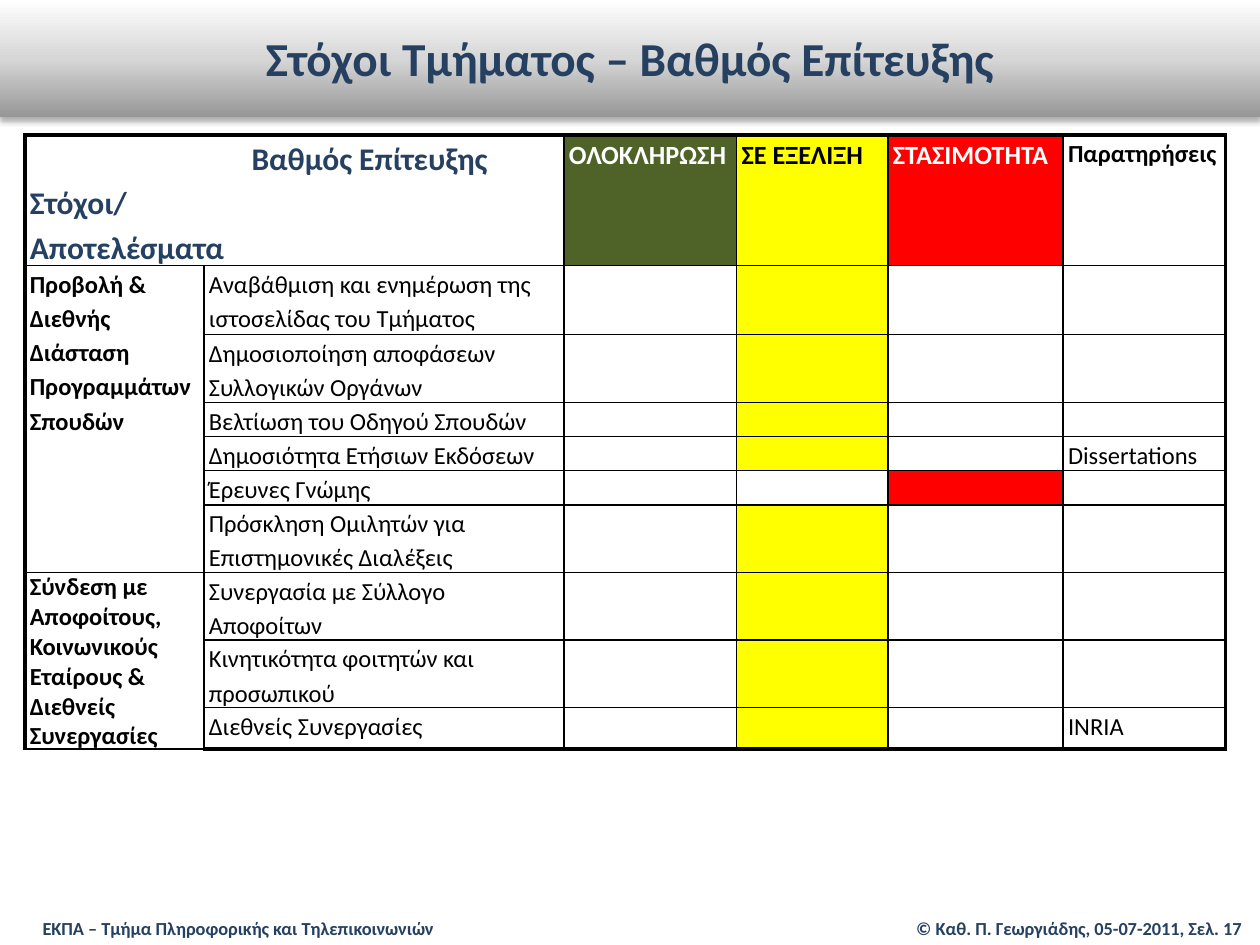
"""Build the slide on department goals and their degree of achievement."""
from lxml import etree
from pptx import Presentation
from pptx.dml.color import RGBColor
from pptx.enum.text import MSO_ANCHOR, MSO_AUTO_SIZE, PP_ALIGN
from pptx.oxml import parse_xml
from pptx.oxml.ns import nsdecls, qn
from pptx.util import Cm, Pt

LEFT, CENTER, RIGHT = PP_ALIGN.LEFT, PP_ALIGN.CENTER, PP_ALIGN.RIGHT
MIDDLE, NO_FIT = MSO_ANCHOR.MIDDLE, MSO_AUTO_SIZE.NONE

NAVY, BLACK, WHITE = "254061", "000000", "FFFFFF"
GREEN, YELLOW, RED = "4F6228", "FFFF00", "FF0000"

TITLE = "Στόχοι Τμήματος – Βαθμός Επίτευξης"
FOOTERS = [
    ("ΕΚΠΑ – Τμήμα Πληροφορικής και Τηλεπικοινωνιών", 0.61, 9.3, LEFT),
    ("© Καθ. Π. Γεωργιάδης, 05-07-2011, Σελ. 17", 18.08, 7.21, RIGHT),
]
CORNER = ["Βαθμός Επίτευξης", "Στόχοι/", "Αποτελέσματα"]
CORNER_INDENT = 4.47
HEADERS = [
    ("ΟΛΟΚΛΗΡΩΣΗ", 15, WHITE, GREEN),
    ("ΣΕ ΕΞΕΛΙΞΗ", 15, BLACK, YELLOW),
    ("ΣΤΑΣΙΜΟΤΗΤΑ", 15, WHITE, RED),
    ("Παρατηρήσεις", 14, BLACK, None),
]
PROGRESS, STALLED = 3, 4
STATUS_FILLS = {PROGRESS: YELLOW, STALLED: RED}
GROUPS = [
    ("Προβολή & Διεθνής Διάσταση Προγραμμάτων Σπουδών", 1.15, [
        ("Αναβάθμιση και ενημέρωση της ιστοσελίδας του Τμήματος", PROGRESS, ""),
        ("Δημοσιοποίηση αποφάσεων Συλλογικών Οργάνων", PROGRESS, ""),
        ("Βελτίωση του Οδηγού Σπουδών", PROGRESS, ""),
        ("Δημοσιότητα Ετήσιων Εκδόσεων", PROGRESS, "Dissertations"),
        ("Έρευνες Γνώμης", STALLED, ""),
        ("Πρόσκληση Ομιλητών για Επιστημονικές Διαλέξεις", PROGRESS, ""),
    ]),
    ("Σύνδεση με Αποφοίτους, Κοινωνικούς Εταίρους & Διεθνείς Συνεργασίες", 1, [
        ("Συνεργασία με Σύλλογο Αποφοίτων", PROGRESS, ""),
        ("Κινητικότητα φοιτητών και προσωπικού", PROGRESS, ""),
        ("Διεθνείς Συνεργασίες", PROGRESS, "INRIA"),
    ]),
]
COLUMN_WIDTHS = [3.61, 7.26, 3.48, 3.05, 3.53, 3.28]
ROW_HEIGHTS = [2.62, 1.4, 1.36, 0.69, 0.69, 0.69, 1.36, 1.36, 1.36, 0.81]
CELL_MARGINS = {"margin_left": Cm(0.1), "margin_right": Cm(0.1),
                "margin_top": 0, "margin_bottom": 0}
THIN, THICK = Pt(1), Pt(2.25)

BAND_FILL = f"""<a:gradFill {nsdecls('a')} rotWithShape="1"><a:gsLst>
<a:gs pos="0"><a:srgbClr val="979797"/></a:gs>
<a:gs pos="50000"><a:srgbClr val="D7D7D7"/></a:gs>
<a:gs pos="100000"><a:srgbClr val="FFFFFF"/></a:gs>
</a:gsLst><a:lin ang="16200000" scaled="0"/></a:gradFill>"""
BAND_SHADOW = f"""<a:effectLst {nsdecls('a')}>
<a:outerShdw blurRad="44450" dist="27940" dir="5400000" algn="ctr" rotWithShape="0">
<a:srgbClr val="000000"><a:alpha val="32000"/></a:srgbClr></a:outerShdw></a:effectLst>"""


def color(value):
    return RGBColor.from_string(value)


def apply(target, values):
    for name, value in values.items():
        setattr(target, name, value)


def write(frame, lines, size, ink, bold, **paragraph_format):
    for index, line in enumerate(lines):
        para = frame.add_paragraph() if index else frame.paragraphs[0]
        apply(para, paragraph_format)
        span = para.add_run()
        span.text = line
        apply(span.font, {"name": "Calibri", "size": Pt(size), "bold": bold})
        span.font.color.rgb = color(ink)


def place(shape, left, top, width, height):
    apply(shape, {"left": Cm(left), "top": Cm(top),
                  "width": Cm(width), "height": Cm(height)})


def add_title(page):
    title = page.shapes.title
    place(title, 0, -0.02, 25.4, 2.38)
    apply(title.text_frame, {"auto_size": NO_FIT, "vertical_anchor": MIDDLE,
                             "word_wrap": True})
    write(title.text_frame, [TITLE], 27, NAVY, True, alignment=CENTER)
    for markup in (BAND_FILL, BAND_SHADOW):
        title._element.spPr.append(parse_xml(markup))


def border(cell, sides):
    properties = cell._tc.get_or_add_tcPr()
    for index, (side, width) in enumerate(sides.items()):
        properties.insert(index, parse_xml(
            f'<a:ln{side} {nsdecls("a")} w="{width}"><a:solidFill>'
            f'<a:srgbClr val="{BLACK}"/></a:solidFill></a:ln{side}>'))


def fill_cell(cell, fill):
    if fill:
        cell.fill.solid()
        cell.fill.fore_color.rgb = color(fill)
    else:
        cell.fill.background()


def style_grid(table):
    last_row, last_column = len(ROW_HEIGHTS) - 1, len(COLUMN_WIDTHS) - 1
    for row in range(last_row + 1):
        for column in range(last_column + 1):
            cell = table.cell(row, column)
            apply(cell, CELL_MARGINS)
            fill_cell(cell, None)
            border(cell, {
                "L": THIN if column else THICK,
                "R": THICK if column == last_column else THIN,
                "T": THIN if row else THICK,
                "B": THICK if row == last_row else THIN,
            })
            if not cell.text:
                ending = etree.SubElement(cell.text_frame.paragraphs[0]._p,
                                          qn("a:endParaRPr"))
                ending.set("sz", "1400")


def add_goals(page):
    table = page.shapes.add_table(
        len(ROW_HEIGHTS), len(COLUMN_WIDTHS), Cm(0.5), Cm(2.72),
        Cm(sum(COLUMN_WIDTHS)), Cm(sum(ROW_HEIGHTS))).table
    apply(table, {"first_row": False, "horz_banding": False})
    for column, width in zip(table.columns, COLUMN_WIDTHS):
        column.width = Cm(width)
    for row, height in zip(table.rows, ROW_HEIGHTS):
        row.height = Cm(height)

    corner = table.cell(0, 0)
    corner.merge(table.cell(0, 1))
    write(corner.text_frame, CORNER, 18, NAVY, True, line_spacing=1.15)
    first = corner.text_frame.paragraphs[0]._p.get_or_add_pPr()
    first.set("marL", str(Cm(CORNER_INDENT)))
    for column, (label, size, ink, _) in enumerate(HEADERS, 2):
        write(table.cell(0, column).text_frame, [label], size, ink, True,
              line_spacing=1.15)

    statuses = []
    row = 1
    for group, spacing, goals in GROUPS:
        heading = table.cell(row, 0)
        heading.merge(table.cell(row + len(goals) - 1, 0))
        write(heading.text_frame, [group], 14, BLACK, True, line_spacing=spacing)
        for goal, status, note in goals:
            for column, label in ((1, goal), (5, note)):
                if label:
                    write(table.cell(row, column).text_frame, [label], 14, BLACK,
                          False, line_spacing=1.15)
            statuses.append((row, status))
            row += 1

    style_grid(table)
    for column, header in enumerate(HEADERS, 2):
        fill_cell(table.cell(0, column), header[3])
    for row, status in statuses:
        fill_cell(table.cell(row, status), STATUS_FILLS[status])


def add_footers(page):
    for label, left, width, alignment in FOOTERS:
        box = page.shapes.add_textbox(Cm(left), Cm(18.36), Cm(width), Cm(0.71))
        box.text_frame.word_wrap = True
        write(box.text_frame, [label], 10.5, NAVY, True, alignment=alignment)


def main():
    deck = Presentation()
    apply(deck, {"slide_width": Cm(25.4), "slide_height": Cm(19.05)})
    page = deck.slides.add_slide(deck.slide_layouts[5])
    add_footers(page)
    add_goals(page)
    add_title(page)
    deck.save("out.pptx")


if __name__ == "__main__":
    main()
